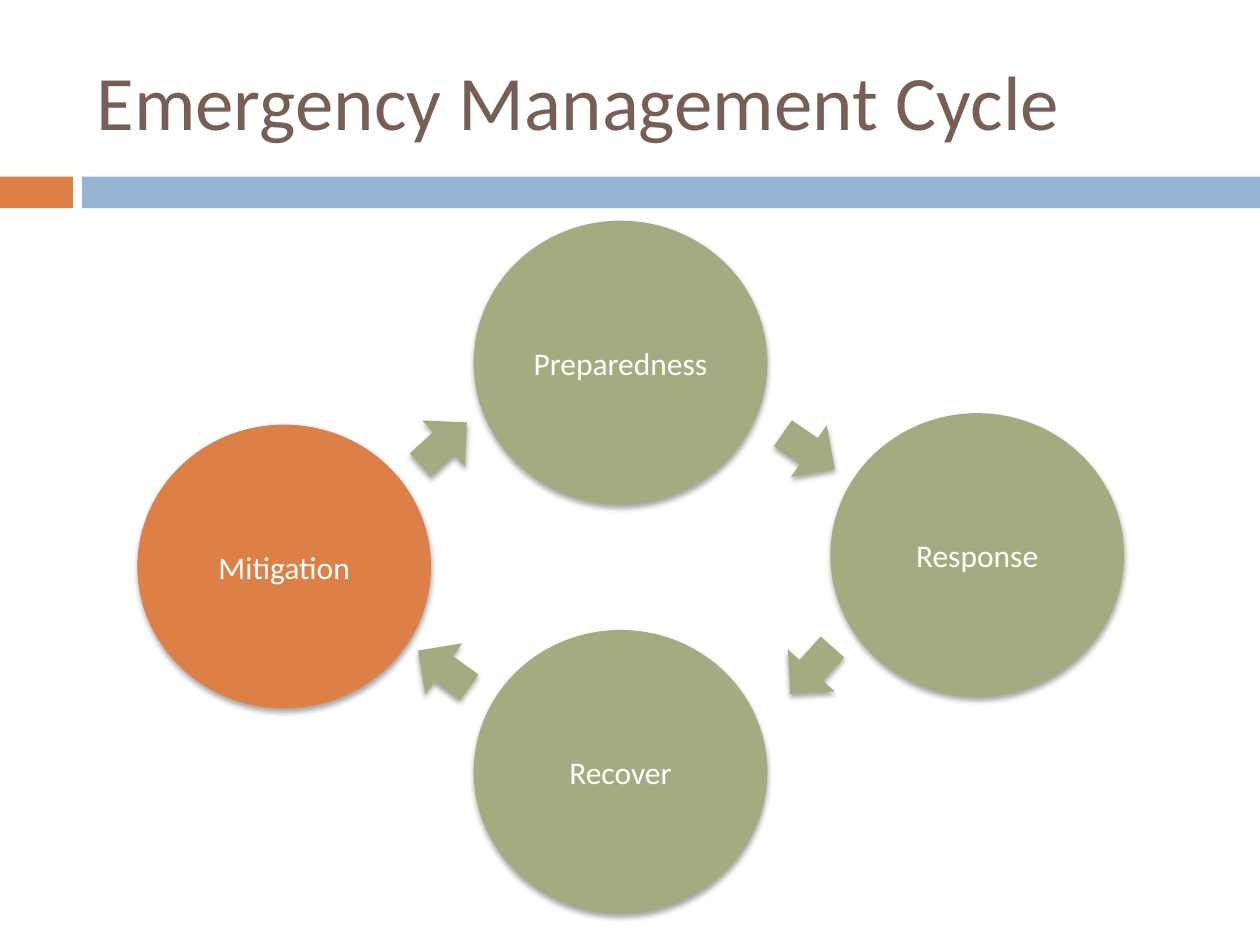
from dataclasses import dataclass

from lxml import etree
from pptx import Presentation
from pptx import util as u
from pptx.dml.color import RGBColor
from pptx.enum import shapes, text
from pptx.oxml import ns


@dataclass(frozen=True)
class Theme:
    font: str = "Calibri"
    title_size: int = 44
    label_size: int = 18
    brown: str = "775F55"
    orange: str = "DD8047"
    blue: str = "94B6D2"
    green: str = "A5AB81"
    white: str = "FFFFFF"
    shadow: str = "000000"


class SlideBuilder:
    def __init__(self, page, theme):
        self.page = page
        self.theme = theme

    def shape(self, kind, left, top, width, height, color):
        shape = self.page.shapes.add_shape(
            kind, u.Cm(left), u.Cm(top), u.Cm(width), u.Cm(height))
        shape.fill.solid()
        shape.fill.fore_color.rgb = RGBColor.from_string(color)
        shape.line.fill.background()
        shape.shadow.inherit = False
        return shape

    def set_text(self, box, words, size, color, align):
        frame = box.text_frame
        frame.word_wrap = True
        frame.vertical_anchor = text.MSO_ANCHOR.MIDDLE
        para = frame.paragraphs[0]
        para.text = words
        para.alignment = align
        para.font.name = self.theme.font
        para.font.size = u.Pt(size)
        para.font.color.rgb = RGBColor.from_string(color)

    def add_shadow(self, shape):
        effects = shape._element.spPr.find(ns.qn("a:effectLst"))
        shadow = etree.SubElement(
            effects, ns.qn("a:outerShdw"), blurRad=str(u.Pt(3)),
            dist=str(u.Pt(2)), dir=str(90 * 60000), rotWithShape="0")
        color = etree.SubElement(shadow, ns.qn("a:srgbClr"), val=self.theme.shadow)
        etree.SubElement(color, ns.qn("a:alpha"), val="35000")

    def title(self, words, left, top, width, height):
        box = self.page.shapes.add_textbox(
            u.Cm(left), u.Cm(top), u.Cm(width), u.Cm(height))
        self.set_text(box, words, self.theme.title_size, self.theme.brown,
                      text.PP_ALIGN.LEFT)

    def bar(self, left, width, color):
        self.shape(shapes.MSO_SHAPE.RECTANGLE, left, 3.56, width, 0.64, color)

    def stage(self, words, left, top, color):
        circle = self.shape(shapes.MSO_SHAPE.OVAL, left, top, 5.92, 5.72, color)
        self.add_shadow(circle)
        self.set_text(circle, words, self.theme.label_size, self.theme.white,
                      text.PP_ALIGN.CENTER)

    def arrow(self, left, top, angle):
        arrow = self.shape(shapes.MSO_SHAPE.RIGHT_ARROW, left, top, 1.27, 1.27,
                           self.theme.green)
        arrow.rotation = angle
        self.add_shadow(arrow)


def main():
    theme = Theme()
    deck = Presentation()
    deck.slide_width, deck.slide_height = u.Cm(25.4), u.Cm(19.05)
    builder = SlideBuilder(deck.slides.add_slide(deck.slide_layouts[6]), theme)

    # Header
    builder.bar(0, 1.47, theme.orange)
    builder.bar(1.65, 23.75, theme.blue)
    builder.title("Emergency Management Cycle", 1.7, 0.64, 22.66, 2.74)

    # Stages of the cycle
    for words, left, top, color in (
        ("Preparedness", 9.55, 4.45, theme.green),
        ("Recover", 9.55, 12.7, theme.green),
        ("Mitigation", 2.77, 8.56, theme.orange),
        ("Response", 16.74, 8.33, theme.green),
    ):
        builder.stage(words, left, top, color)

    # Clockwise arrows between stages
    for left, top, angle in (
        (15.67, 8.46, 34.6),
        (15.72, 12.88, 131.9),
        (8.31, 12.85, 215.7),
        (8.31, 8.31, 317.4),
    ):
        builder.arrow(left, top, angle)

    deck.save("out.pptx")


if __name__ == "__main__":
    main()
